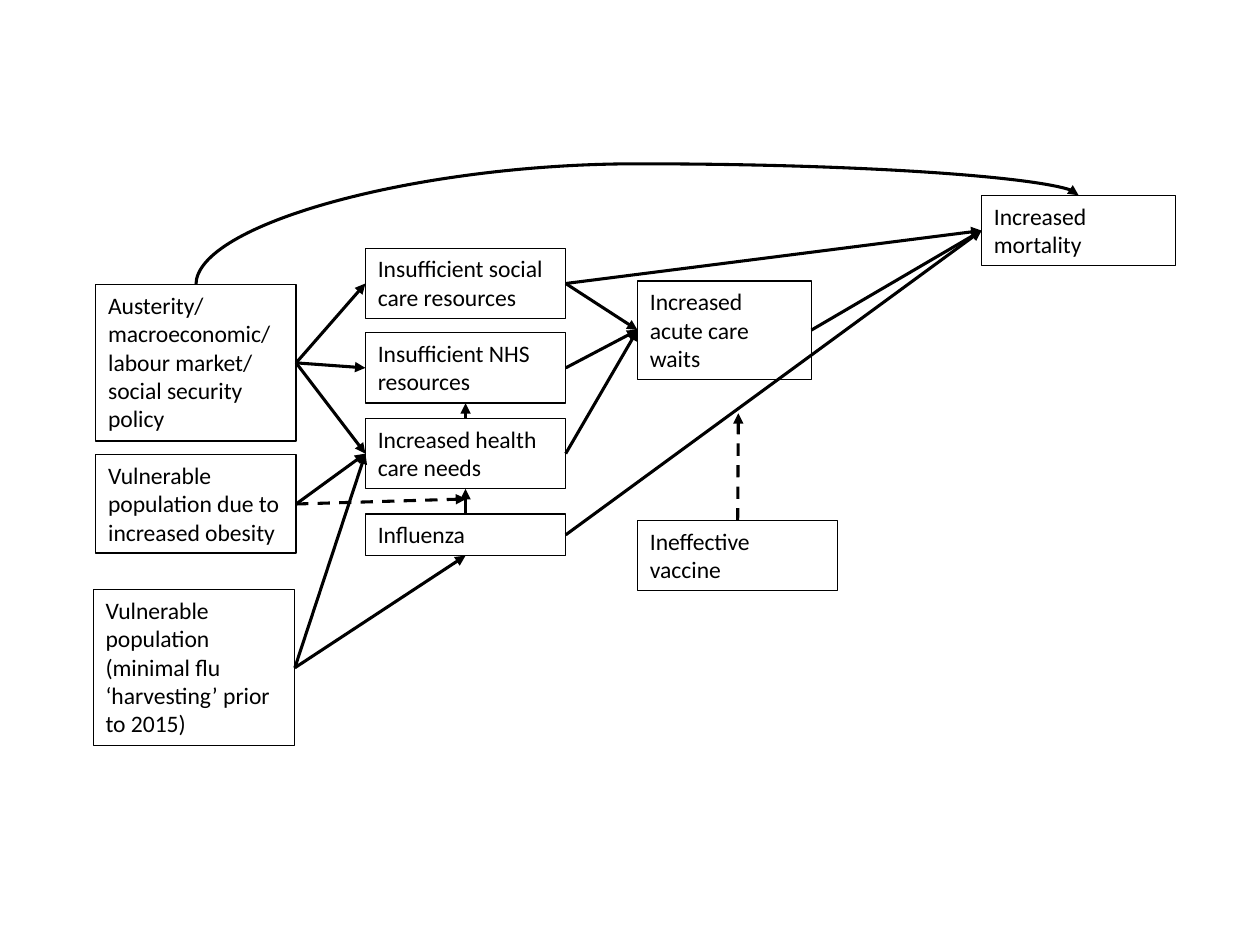
from pptx import Presentation
from pptx.dml.color import RGBColor
from pptx.enum.dml import MSO_LINE
from pptx.enum.shapes import MSO_CONNECTOR
from pptx.oxml.ns import qn
from pptx.util import Inches, Pt
from lxml import etree

STRAIGHT, CURVE = MSO_CONNECTOR.STRAIGHT, MSO_CONNECTOR.CURVE
DASH = MSO_LINE.DASH
TOP, LEFT, BOTTOM, RIGHT = range(4)  # connection sites of a rectangle
BLACK = "000000"

# name: (text, left, top, width, height)
BOXES = {
    "policy": ("Austerity/ macroeconomic/ labour market/ social security policy",
               0.76, 2.26, 1.59, 1.24),
    "social": ("Insufficient social care resources", 2.9, 1.97, 1.59, 0.56),
    "nhs": ("Insufficient NHS resources", 2.9, 2.64, 1.59, 0.56),
    "needs": ("Increased health care needs", 2.9, 3.32, 1.59, 0.56),
    "waits": ("Increased acute care waits", 5.06, 2.23, 1.38, 0.78),
    "influenza": ("Influenza", 2.9, 4.08, 1.59, 0.33),
    "vaccine": ("Ineffective vaccine", 5.06, 4.13, 1.59, 0.56),
    "vulnerable": ("Vulnerable population (minimal flu ‘harvesting’ prior to 2015)",
                   0.74, 4.68, 1.6, 1.24),
    "mortality": ("Increased mortality", 7.79, 1.55, 1.54, 0.56),
    "obesity": ("Vulnerable population due to increased obesity",
                0.76, 3.61, 1.59, 0.78),
}

# (from box, site, to box, site)
CAUSES = [
    ("policy", RIGHT, "social", LEFT),
    ("policy", RIGHT, "needs", LEFT),
    ("social", RIGHT, "waits", LEFT),
    ("nhs", RIGHT, "waits", LEFT),
    ("needs", TOP, "nhs", BOTTOM),
    ("social", RIGHT, "mortality", LEFT),
    ("influenza", RIGHT, "mortality", LEFT),
    ("needs", RIGHT, "waits", LEFT),
    ("influenza", TOP, "needs", BOTTOM),
    ("policy", RIGHT, "nhs", LEFT),
    ("vulnerable", RIGHT, "influenza", BOTTOM),
    ("vulnerable", RIGHT, "needs", LEFT),
    ("waits", RIGHT, "mortality", LEFT),
    ("obesity", RIGHT, "needs", LEFT),
]

# (from box, site, end point): these act on another arrow
MODIFIERS = [
    ("vaccine", TOP, (5.86, 3.28)),
    ("obesity", RIGHT, (3.7, 3.96)),
]


def color(hex_string):
    return RGBColor.from_string(hex_string)


def add_box(slide, text, *box):
    sp = slide.shapes.add_textbox(*map(Inches, box))
    sp.line.color.rgb = color(BLACK)
    sp.line.width = Pt(0.75)
    tf = sp.text_frame
    tf.word_wrap = True
    p = tf.paragraphs[0]
    p.text = text
    p.font.name = "Calibri"
    p.font.size = Pt(13.5)
    p.font.color.rgb = color(BLACK)
    return sp


def add_arrow(slide, start, site, end=(0, 0), kind=STRAIGHT):
    """Arrow from a site of the start box to a point in inches."""
    x, y = map(Inches, end)
    cxn = slide.shapes.add_connector(kind, x, y, x, y)
    cxn.begin_connect(start, site)
    cxn.line.color.rgb = color(BLACK)
    cxn.line.width = Pt(1.75)
    ln = cxn.line._get_or_add_ln()
    etree.SubElement(ln, qn("a:tailEnd"), type="triangle")
    etree.SubElement(cxn._element.spPr, qn("a:effectLst"))
    return cxn


def add_policy_arc(slide, policy, mortality):
    """Curve that leaves the policy box upwards and enters mortality from above."""
    cxn = add_arrow(slide, policy, TOP, kind=CURVE)
    cxn.end_connect(mortality, TOP)
    rise, run = cxn.height, cxn.width
    mid_x, mid_y = cxn.left + run // 2, cxn.top + rise // 2
    # A quarter turn swaps the width and height about the same centre
    cxn.left, cxn.top = mid_x - rise // 2, mid_y - run // 2
    cxn.width, cxn.height = rise, run
    xfrm = cxn._element.spPr.find(qn("a:xfrm"))
    for name, value in (("rot", "5400000"), ("flipH", "1"), ("flipV", "1")):
        xfrm.set(name, value)
    geom = cxn._element.spPr.find(qn("a:prstGeom"))
    geom.set("prst", "curvedConnector3")
    guides = geom.find(qn("a:avLst"))
    etree.SubElement(guides, qn("a:gd"), name="adj1", fmla="val 135200")


def add_causal_diagram(slide):
    boxes = {name: add_box(slide, *spec) for name, spec in BOXES.items()}
    for start, site, end, end_site in CAUSES:
        add_arrow(slide, boxes[start], site).end_connect(boxes[end], end_site)
    for start, site, point in MODIFIERS:
        add_arrow(slide, boxes[start], site, point).line.dash_style = DASH
    add_policy_arc(slide, boxes["policy"], boxes["mortality"])


def main():
    prs = Presentation()
    prs.slide_width, prs.slide_height = Inches(10), Inches(7.5)
    slide = prs.slides.add_slide(prs.slide_layouts[6])
    add_causal_diagram(slide)
    prs.save("out.pptx")


if __name__ == "__main__":
    main()
